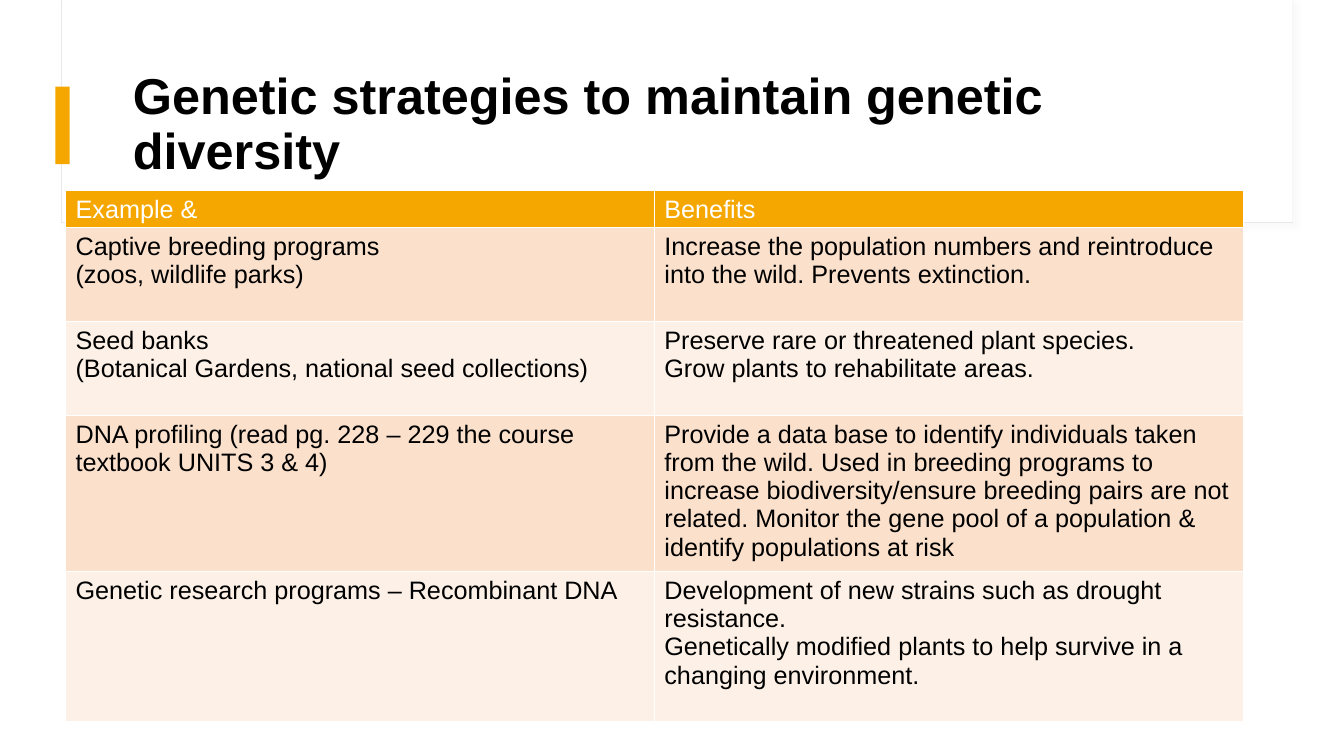
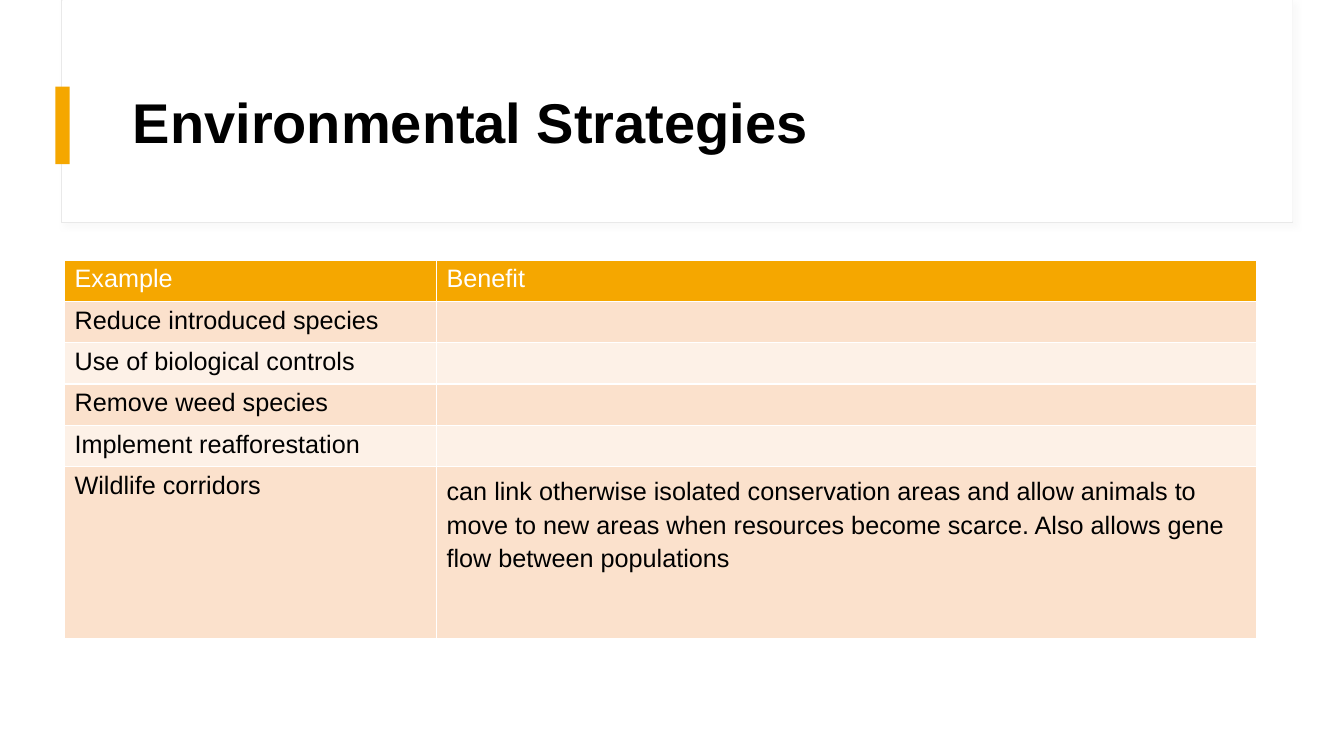
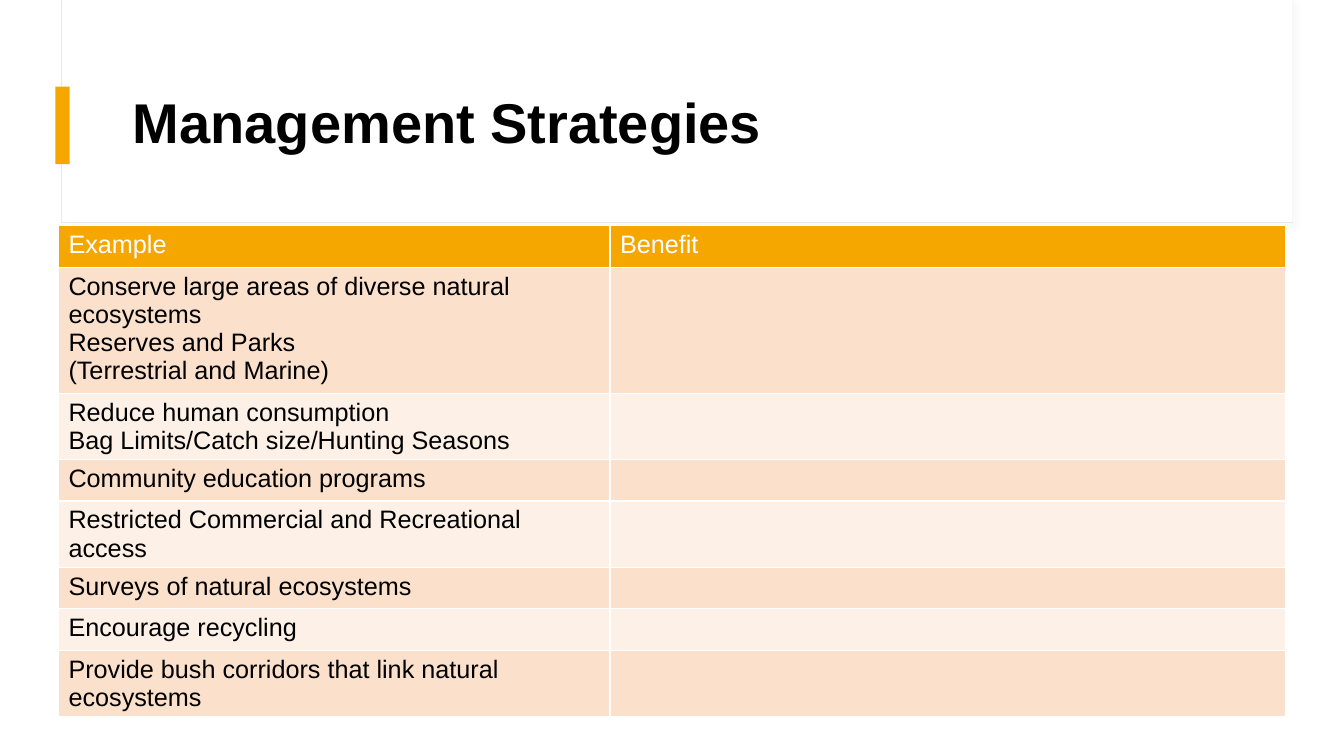
from lxml import etree
from pptx import Presentation
from pptx.dml.color import RGBColor
from pptx.enum import shapes, text
from pptx.oxml import ns
from pptx.util import Inches, Pt

COLORS = {
    "white": "FFFFFF",
    "black": "000000",
    "accent": "F5A700",
    "band_dark": "FBE1CC",
    "band_light": "FDF1E7",
    "frame": "E9E9E9",
    "shadow": "D9D9D9",
}
FONT = "Arial"

GENETIC_ROWS = [
    ("Example &", "Benefits"),
    ("Captive breeding programs\n(zoos, wildlife parks)",
     "Increase the population numbers and reintroduce into the wild. Prevents extinction."),
    ("Seed banks\n(Botanical Gardens, national seed collections)",
     "Preserve rare or threatened plant species.\nGrow plants to rehabilitate areas."),
    ("DNA profiling (read pg. 228 – 229 the course textbook UNITS 3 & 4)",
     "Provide a data base to identify individuals taken from the wild. "
     "Used in breeding programs to increase biodiversity/ensure breeding pairs are not related. "
     "Monitor the gene pool of a population & identify populations at risk"),
    ("Genetic research programs – Recombinant DNA",
     "Development of new strains such as drought resistance.\n"
     "Genetically modified plants to help survive in a changing environment."),
]
ENVIRONMENT_ROWS = [
    ("Example", "Benefit"),
    ("Reduce introduced species", ""),
    ("Use of biological controls", ""),
    ("Remove weed species", ""),
    ("Implement reafforestation", ""),
    ("Wildlife corridors",
     "can link otherwise isolated conservation areas and allow animals to move to new areas "
     "when resources become scarce. Also allows gene flow between populations"),
]
MANAGEMENT_ROWS = [
    ("Example", "Benefit"),
    ("Conserve large areas of diverse natural ecosystems\nReserves and Parks\n"
     "(Terrestrial and Marine)", ""),
    ("Reduce human consumption\nBag Limits/Catch size/Hunting Seasons", ""),
    ("Community education programs", ""),
    ("Restricted Commercial and Recreational access", ""),
    ("Surveys of natural ecosystems", ""),
    ("Encourage recycling", ""),
    ("Provide bush corridors that link natural ecosystems", ""),
]


def rgb(color):
    return RGBColor.from_string(COLORS[color])


def add_solid_fill(parent, color):
    fill = etree.SubElement(parent, ns.qn("a:solidFill"))
    etree.SubElement(fill, ns.qn("a:srgbClr"), val=COLORS[color])


def style_font(font, size, color, bold=False):
    for name, value in {"name": FONT, "size": Pt(size), "bold": bold}.items():
        setattr(font, name, value)
    font.color.rgb = rgb(color)


def add_rectangle(slide, left, top, width, height, fill, line=None):
    rectangle = slide.shapes.add_shape(
        shapes.MSO_SHAPE.RECTANGLE, *map(Inches, (left, top, width, height)))
    rectangle.shadow.inherit = False
    rectangle.fill.solid()
    rectangle.fill.fore_color.rgb = rgb(fill)
    if line:
        rectangle.line.color.rgb = rgb(line)
        rectangle.line.width = Pt(0.75)
    else:
        rectangle.line.fill.background()
    return rectangle


def add_soft_shadow(shape):
    effects = shape._element.spPr.find(ns.qn("a:effectLst"))
    shadow = etree.SubElement(
        effects, ns.qn("a:outerShdw"), blurRad=str(Pt(4)), dist=str(Pt(3)),
        dir=str(45 * 60000), algn="tl", rotWithShape="0")
    color = etree.SubElement(shadow, ns.qn("a:srgbClr"), val=COLORS["shadow"])
    etree.SubElement(color, ns.qn("a:alpha"), val="15000")


def add_title(slide, wording, size):
    title = slide.shapes.add_textbox(*map(Inches, (1.22, 0.6, 11.12, 1.29)))
    frame = title.text_frame
    frame.word_wrap = True
    frame.vertical_anchor = text.MSO_ANCHOR.MIDDLE
    frame.text = wording
    paragraph = frame.paragraphs[0]
    paragraph.line_spacing = 0.9
    style_font(paragraph.runs[0].font, size, "black", bold=True)


def add_titled_slide(deck, title, title_size=40):
    slide = deck.slides.add_slide(deck.slide_layouts[6])
    add_soft_shadow(add_rectangle(slide, 0.61, 0, 12.21, 2.21, "white", "frame"))
    add_rectangle(slide, 0.62, 0, 12.2, 2.2, "white")
    add_rectangle(slide, 0.55, 0.86, 0.14, 0.77, "accent")
    add_title(slide, title, title_size)
    return slide


def add_cell_borders(cell):
    """Rule all four sides; borders must precede the fill in the cell properties."""
    properties = cell._tc.get_or_add_tcPr()
    for position, side in enumerate(("lnL", "lnR", "lnT", "lnB")):
        border = etree.Element(ns.qn("a:" + side), w=str(Pt(1)))
        add_solid_fill(border, "white")
        properties.insert(position, border)


def fill_cell(cell, wording, fill, font_color):
    cell.fill.solid()
    cell.fill.fore_color.rgb = rgb(fill)
    add_cell_borders(cell)
    cell.margin_bottom = 0
    cell.text = wording
    for paragraph in cell.text_frame.paragraphs:
        for run in paragraph.runs:
            style_font(run.font, 18, font_color)


def add_strategy_table(slide, left, top, widths, heights, rows):
    """Draw an accent header row followed by alternating bands."""
    table = slide.shapes.add_table(
        len(rows), len(widths), Inches(left), Inches(top),
        Inches(sum(widths)), Inches(sum(heights))).table
    table.first_row = table.horz_banding = False
    for column, width in zip(table.columns, widths):
        column.width = Inches(width)
    for index, (row, height, wordings) in enumerate(zip(table.rows, heights, rows)):
        row.height = Inches(height)
        if index == 0:
            fill, font_color = "accent", "white"
        else:
            fill, font_color = ("band_dark" if index % 2 else "band_light"), "black"
        for cell, wording in zip(row.cells, wordings):
            fill_cell(cell, wording, fill, font_color)
    return table


def main():
    deck = Presentation()
    deck.slide_width, deck.slide_height = Inches(13.33), Inches(7.5)

    genetic = add_titled_slide(deck, "Genetic strategies to maintain genetic diversity", 36)
    add_strategy_table(genetic, 0.65, 1.89, [5.84, 5.84],
                       [0.37, 0.93, 0.93, 1.5, 1.49], GENETIC_ROWS)

    environment = add_titled_slide(deck, "Environmental Strategies")
    strategies = add_strategy_table(environment, 0.64, 2.58, [3.69, 8.13],
                                    [0.41] * 5 + [1.71], ENVIRONMENT_ROWS)
    corridor_benefit = strategies.cell(5, 1).text_frame.paragraphs[0]
    corridor_benefit.line_spacing = 1.2

    management = add_titled_slide(deck, "Management Strategies")
    add_strategy_table(management, 0.58, 2.24, [5.47, 6.7],
                       [0.41, 1.22, 0.66, 0.41, 0.66, 0.41, 0.41, 0.66], MANAGEMENT_ROWS)

    deck.save("out.pptx")


if __name__ == "__main__":
    main()
